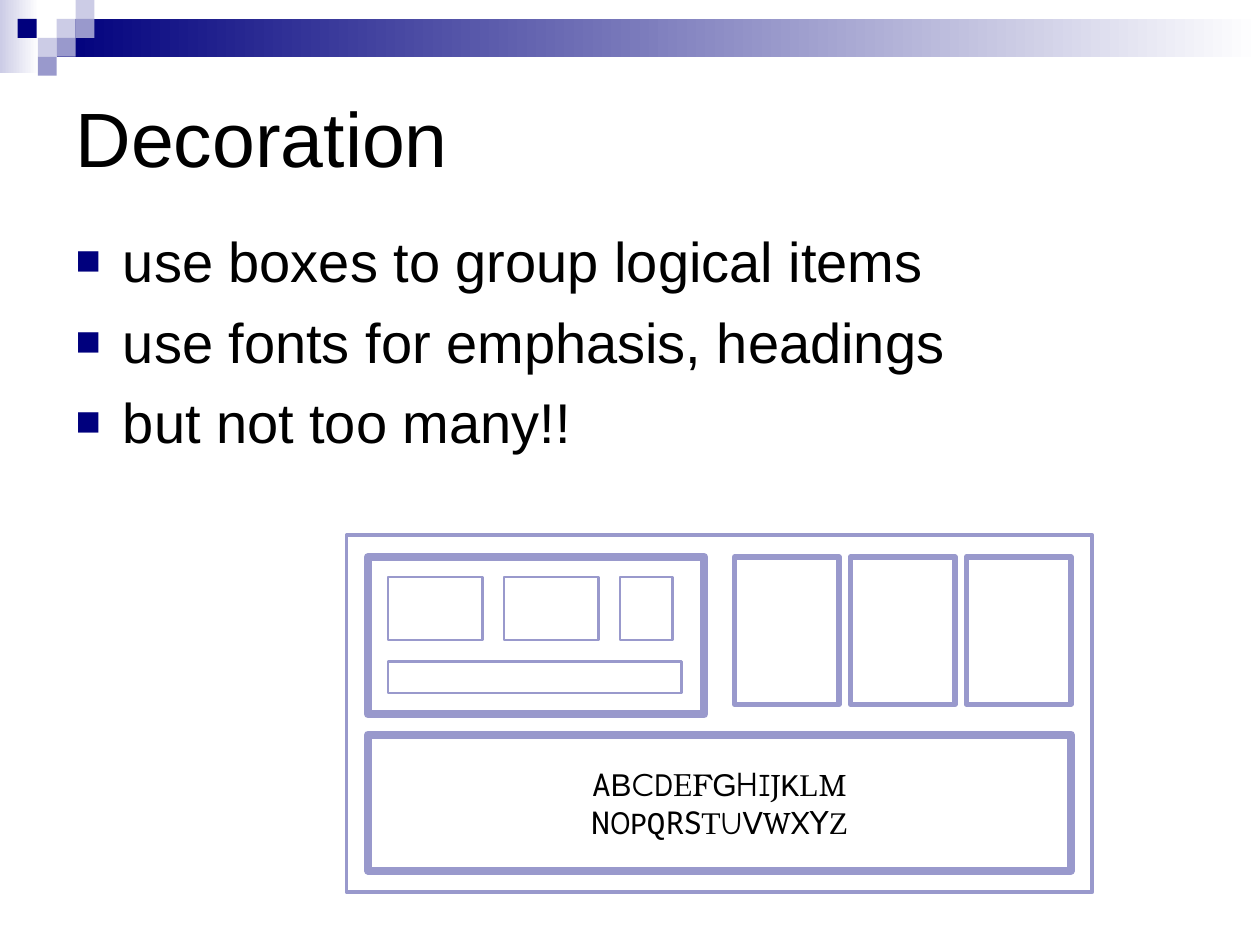
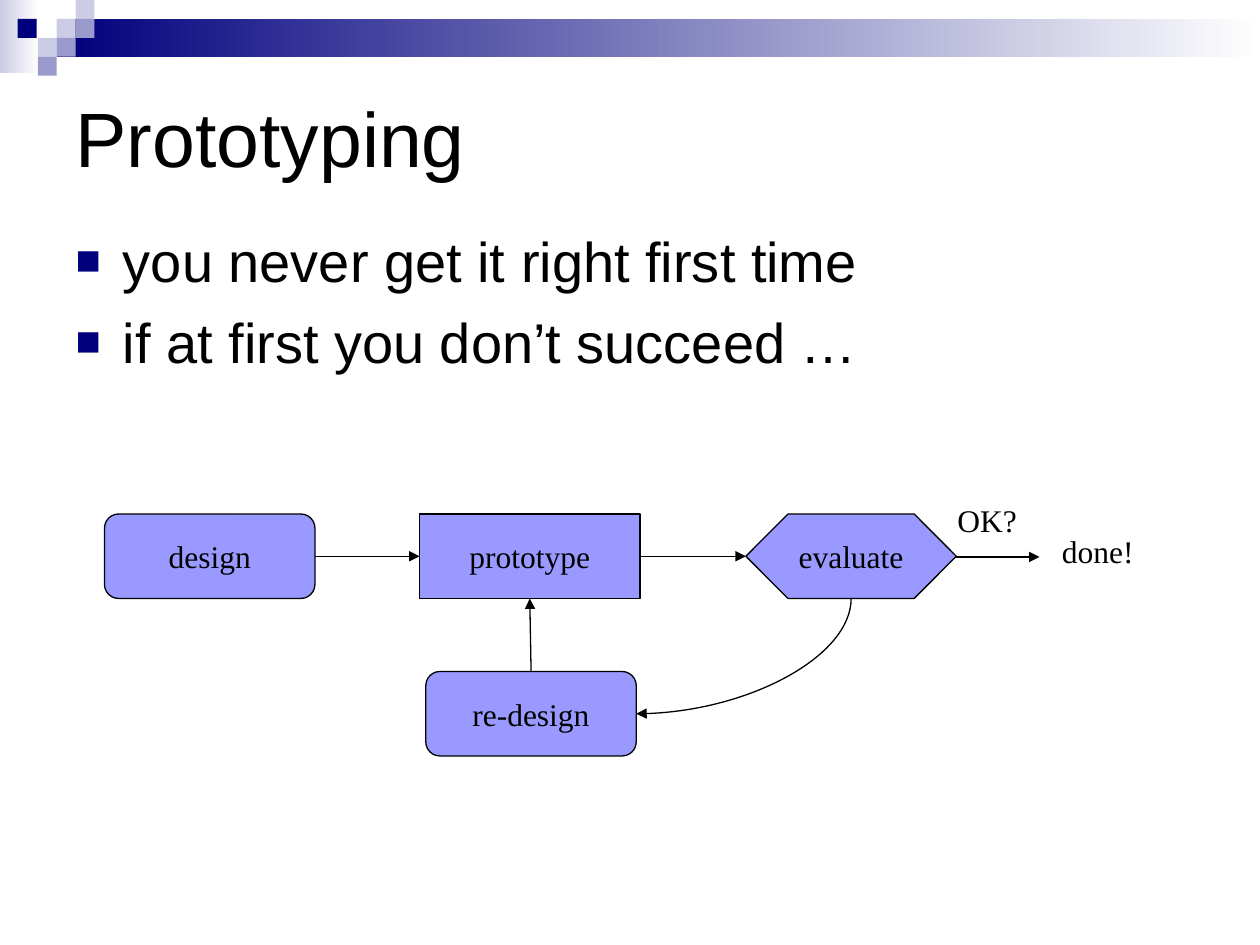
from dataclasses import dataclass

from lxml import etree
from pptx import Presentation
from pptx.dml.color import RGBColor
from pptx.enum.shapes import MSO_CONNECTOR, MSO_SHAPE
from pptx.enum.text import MSO_ANCHOR, MSO_AUTO_SIZE, PP_ALIGN
from pptx.oxml.ns import qn
from pptx.shapes.autoshape import Shape
from pptx.shapes.connector import Connector
from pptx.slide import Slide
from pptx.text.text import _Paragraph
from pptx.util import Inches, Pt

RECT = MSO_SHAPE.RECTANGLE
PROCESS = MSO_SHAPE.FLOWCHART_PROCESS
PREPARATION = MSO_SHAPE.FLOWCHART_PREPARATION
ALTERNATE = MSO_SHAPE.FLOWCHART_ALTERNATE_PROCESS
STRAIGHT, CURVE = MSO_CONNECTOR.STRAIGHT, MSO_CONNECTOR.CURVE
MIDDLE, TOP = MSO_ANCHOR.MIDDLE, MSO_ANCHOR.TOP
LEFT, CENTER = PP_ALIGN.LEFT, PP_ALIGN.CENTER
NO_AUTOFIT = MSO_AUTO_SIZE.NONE

BLACK = RGBColor(0x00, 0x00, 0x00)
WHITE = RGBColor(0xFF, 0xFF, 0xFF)
NAVY = RGBColor(0x00, 0x00, 0x7D)
LAVENDER = RGBColor(0x99, 0x99, 0xCC)
PALE = RGBColor(0xCC, 0xCC, 0xE6)
STEP_FILL = RGBColor(0x99, 0x99, 0xFF)

SANS, SERIF = "Arial", "Times New Roman"
TILE = 0.15

# Connection sites of the flow chart shapes
SITE_TOP, SITE_LEFT, SITE_BOTTOM, SITE_RIGHT = range(4)


@dataclass(frozen=True)
class Box:
    left: float
    top: float
    width: float
    height: float


@dataclass(frozen=True)
class Tile:
    left: float
    top: float
    color: RGBColor


@dataclass(frozen=True)
class Frame:
    box: Box
    weight: float


@dataclass(frozen=True)
class Step:
    label: str
    kind: MSO_SHAPE
    box: Box


@dataclass(frozen=True)
class Arrow:
    start: str
    start_site: int
    end: str
    end_site: int


FADES = [(Box(0, 0, 0.31, 0.58), PALE), (Box(0.45, 0.15, 9.55, 0.3), NAVY)]
TILES = [
    Tile(0.45, 0.15, PALE), Tile(0.6, 0, PALE), Tile(0.6, 0.15, LAVENDER),
    Tile(0.3, 0.3, PALE), Tile(0.14, 0.15, NAVY), Tile(0.45, 0.3, LAVENDER),
    Tile(0.3, 0.45, LAVENDER),
]

FONT_BOX = Frame(Box(2.92, 5.83, 5.58, 1.08), 4.5)
FRAMES = [
    Frame(Box(2.75, 4.25, 5.92, 2.83), 2.25),
    Frame(Box(2.92, 4.42, 2.67, 1.25), 4.5),
    *(Frame(Box(5.83 + 0.92 * i, 4.42, 0.83, 1.17), 3) for i in range(3)),
    *(Frame(Box(3.08 + 0.92 * i, 4.58, width, 0.5), 1.5)
      for i, width in enumerate((0.75, 0.75, 0.42))),
    Frame(Box(3.08, 5.25, 2.33, 0.25), 1.5),
]
LETTER_FONTS = [
    ("ABCDEFGHIJKLM",
     ["Roboto Condensed", SANS, "Montserrat", "Arial Narrow",
      "TeX Gyre Pagella", "TeX Gyre Bonum", SANS, "TeX Gyre Adventor",
      "Comic Neue", "Cambria", "Courier New", SERIF, "Cambria"]),
    ("NOPQRSTUVWXYZ",
     ["Roboto Condensed", "Arial Narrow", "Calibri", "Courier New",
      "Noto Sans Mono", "Lato", SERIF, "Comic Neue", "Cabin", "Cambria",
      "Cabin", "DejaVu Sans", SERIF]),
]

STEPS = [
    Step("prototype", PROCESS, Box(3.33, 4.08, 1.75, 0.67)),
    Step("evaluate", PREPARATION, Box(5.92, 4.08, 1.67, 0.67)),
    Step("design", ALTERNATE, Box(0.83, 4.08, 1.67, 0.67)),
    Step("re-design", ALTERNATE, Box(3.38, 5.33, 1.67, 0.67)),
]
ARROWS = [
    Arrow("prototype", SITE_RIGHT, "evaluate", SITE_LEFT),
    Arrow("design", SITE_RIGHT, "prototype", SITE_LEFT),
    Arrow("re-design", SITE_TOP, "prototype", SITE_BOTTOM),
]
OUTCOMES = [("done!", Box(8.33, 4.17, 0.96, 0.5)),
            ("OK?", Box(7.5, 3.93, 0.67, 0.4))]


def lengths(box: Box) -> list[int]:
    return [Inches(v) for v in (box.left, box.top, box.width, box.height)]


def add_run(paragraph: _Paragraph, text: str, size: float, font: str) -> None:
    run = paragraph.add_run()
    run.text = text
    run.font.size, run.font.name = Pt(size), font
    run.font.color.rgb = BLACK


def add_box(slide: Slide, box: Box, fill: RGBColor, line: RGBColor | None = None,
            weight: float = 0, kind: MSO_SHAPE = RECT) -> Shape:
    shape = slide.shapes.add_shape(kind, *lengths(box))
    shape.shadow.inherit = False
    shape.fill.solid()
    shape.fill.fore_color.rgb = fill
    if line is None:
        shape.line.fill.background()
    else:
        shape.line.color.rgb = line
        shape.line.width = Pt(weight)
    return shape


def add_master_band(prs: Presentation, slide: Slide) -> None:
    """Draw the header band once and move it to the slide master."""
    band = []
    for box, color in FADES:
        fade = add_box(slide, box, color)
        fade.fill.gradient()
        fade.fill.gradient_angle = 0
        for stop, stop_color in zip(fade.fill.gradient_stops, (color, WHITE)):
            stop.color.rgb = stop_color
        band.append(fade)
    for tile in TILES:
        band.append(add_box(slide, Box(tile.left, tile.top, TILE, TILE), tile.color))
    master_tree = prs.slide_master.shapes._spTree
    for i, shape in enumerate(band):
        shape._element.nvSpPr.cNvPr.set("id", str(100 + i))
        master_tree.insert(2 + i, shape._element)


def add_bullet(paragraph: _Paragraph) -> None:
    props = paragraph._p.get_or_add_pPr()
    props.set("marL", str(Inches(0.375)))
    props.set("indent", str(-Inches(0.375)))
    color = etree.SubElement(props, qn("a:buClr"))
    etree.SubElement(color, qn("a:srgbClr"), val=str(NAVY))
    etree.SubElement(props, qn("a:buSzPct"), val="75000")
    etree.SubElement(props, qn("a:buFont"), typeface=SANS)
    etree.SubElement(props, qn("a:buChar"), char="■")


def fill_placeholders(slide: Slide, title: str, points: list[str]) -> None:
    heading, body = slide.shapes.title, slide.placeholders[1]
    for holder, box, anchor in ((heading, Box(0.5, 0.5, 9, 1.17), MIDDLE),
                                (body, Box(0.5, 1.75, 9, 4.92), TOP)):
        holder.left, holder.top, holder.width, holder.height = lengths(box)
        holder.text_frame.vertical_anchor = anchor
        holder.text_frame.auto_size = NO_AUTOFIT

    title_line = heading.text_frame.paragraphs[0]
    title_line.alignment = LEFT
    add_run(title_line, title, 44, SANS)

    for i, point in enumerate(points):
        frame = body.text_frame
        paragraph = frame.add_paragraph() if i else frame.paragraphs[0]
        add_bullet(paragraph)
        paragraph.space_before = Pt(7.5 if i else 0)
        add_run(paragraph, point, 32, SANS)


def add_arrow(slide: Slide, kind: MSO_CONNECTOR, start: tuple[int, int],
              end: tuple[int, int]) -> Connector:
    arrow = slide.shapes.add_connector(kind, *start, *end)
    arrow.line.color.rgb = BLACK
    arrow.line.width = Pt(0.75)
    etree.SubElement(arrow.line._get_or_add_ln(), qn("a:tailEnd"), type="triangle")
    etree.SubElement(arrow._element.spPr, qn("a:effectLst"))
    return arrow


def add_return_curve(slide: Slide, evaluate: Shape, redesign: Shape) -> None:
    """Quarter curve leaving evaluate downwards and entering re-design."""
    start_x, start_y = evaluate.left + evaluate.width // 2, evaluate.top + evaluate.height
    end_x, end_y = redesign.left + redesign.width, redesign.top + redesign.height // 2
    run, drop = start_x - end_x, end_y - start_y
    # The frame is given as it lies before its quarter turn
    left = (start_x + end_x - drop) // 2
    top = (start_y + end_y - run) // 2
    curve = add_arrow(slide, CURVE, (left, top), (left + drop, top + run))
    properties = curve._element.spPr
    properties.find(qn("a:xfrm")).set("rot", "5400000")
    properties.find(qn("a:prstGeom")).set("prst", "curvedConnector2")


def build_decoration(slide: Slide) -> None:
    fill_placeholders(slide, "Decoration", [
        "use boxes to group logical items",
        "use fonts for emphasis, headings",
        "but not too many!!",
    ])
    # Nested boxes
    for frame in FRAMES:
        add_box(slide, frame.box, WHITE, LAVENDER, frame.weight)
    # Alphabet in too many fonts
    alphabet = add_box(slide, FONT_BOX.box, WHITE, LAVENDER, FONT_BOX.weight).text_frame
    alphabet.word_wrap = False
    alphabet.vertical_anchor = MIDDLE
    for i, (letters, fonts) in enumerate(LETTER_FONTS):
        row = alphabet.add_paragraph() if i else alphabet.paragraphs[0]
        row.alignment = CENTER
        for letter, font in zip(letters, fonts):
            add_run(row, letter, 18, font)


def build_prototyping(slide: Slide) -> None:
    fill_placeholders(slide, "Prototyping", [
        "you never get it right first time",
        "if at first you don’t succeed …",
    ])
    # Steps of the cycle
    steps: dict[str, Shape] = {}
    for step in STEPS:
        shape = add_box(slide, step.box, STEP_FILL, BLACK, 0.75, step.kind)
        shape.text_frame.word_wrap = False
        shape.text_frame.vertical_anchor = MIDDLE
        label = shape.text_frame.paragraphs[0]
        label.alignment = CENTER
        add_run(label, step.label, 18, SERIF)
        steps[step.label] = shape
    # Arrows between the steps
    for arrow in ARROWS:
        link = add_arrow(slide, STRAIGHT, (0, 0), (0, 0))
        link.begin_connect(steps[arrow.start], arrow.start_site)
        link.end_connect(steps[arrow.end], arrow.end_site)
    add_return_curve(slide, steps["evaluate"], steps["re-design"])
    exit_y = Inches(4.42)
    add_arrow(slide, STRAIGHT, (Inches(7.58), exit_y), (Inches(8.25), exit_y))
    # Way out of the cycle
    for text, box in OUTCOMES:
        outcome = slide.shapes.add_textbox(*lengths(box)).text_frame
        outcome.word_wrap = False
        add_run(outcome.paragraphs[0], text, 18, SERIF)


def main() -> None:
    prs = Presentation()
    prs.slide_width, prs.slide_height = Inches(10), Inches(7.5)
    layout = prs.slide_layouts[1]
    decoration = prs.slides.add_slide(layout)
    add_master_band(prs, decoration)
    build_decoration(decoration)
    build_prototyping(prs.slides.add_slide(layout))
    prs.save("out.pptx")


if __name__ == "__main__":
    main()
